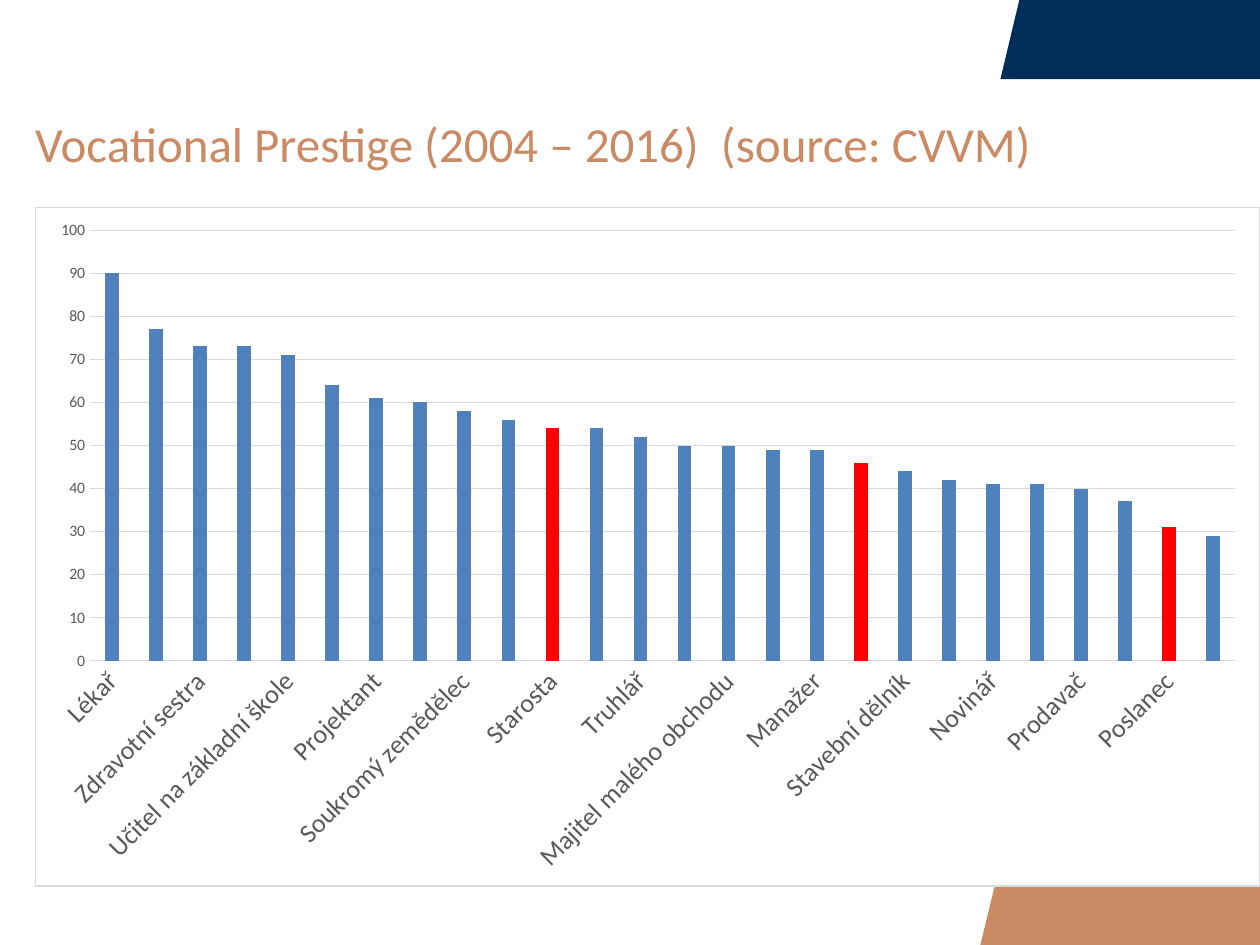
"""Build a slide with a column chart of vocational prestige."""
from dataclasses import dataclass

from lxml.etree import fromstring
from pptx import Presentation
from pptx.chart.data import CategoryChartData
from pptx.dml.color import RGBColor
from pptx.enum.chart import XL_CHART_TYPE, XL_TICK_MARK
from pptx.enum.text import MSO_ANCHOR, MSO_AUTO_SIZE, PP_ALIGN
from pptx.oxml.ns import qn
from pptx.slide import Slide
from pptx.util import Pt

NAVY = RGBColor(0x00, 0x2D, 0x5A)
COPPER = RGBColor(0xCA, 0x8A, 0x64)
BLUE = RGBColor(0x4F, 0x81, 0xBD)
RED = RGBColor(0xFF, 0x00, 0x00)
GREY = RGBColor(0x59, 0x59, 0x59)
PALE_GREY = RGBColor(0xD9, 0xD9, 0xD9)
FONT = "Calibri"
PAGE_WIDTH = 720
PAGE_HEIGHT = 540
SIDE_MARGIN = 20

PRESTIGE = {
    "Lékař": 90,
    "Vědec": 77,
    "Zdravotní sestra": 73,
    "Učitel na vysoké škole": 73,
    "Učitel na základní škole": 71,
    "Soudce": 64,
    "Projektant": 61,
    "Programátor": 60,
    "Soukromý zemědělec": 58,
    "Policista": 56,
    "Starosta": 54,
    "Voják z povolání": 54,
    "Truhlář": 52,
    "Účetní": 50,
    "Majitel malého obchodu": 50,
    "Profesionální sportovec": 49,
    "Manažer": 49,
    "Ministr": 46,
    "Stavební dělník": 44,
    "Bankovní úředník": 42,
    "Novinář": 41,
    "Kněz": 41,
    "Prodavač": 40,
    "Sekretářka": 37,
    "Poslanec": 31,
    "Uklízečka": 29,
}
POLITICIANS = ("Starosta", "Ministr", "Poslanec")

CHART_FRAME = f"""
<c:spPr xmlns:c="http://schemas.openxmlformats.org/drawingml/2006/chart"
        xmlns:a="http://schemas.openxmlformats.org/drawingml/2006/main">
  <a:solidFill><a:srgbClr val="FFFFFF"/></a:solidFill>
  <a:ln w="{Pt(0.75)}"><a:solidFill><a:srgbClr val="{PALE_GREY}"/></a:solidFill></a:ln>
</c:spPr>"""


@dataclass(frozen=True)
class CornerBand:
    left: float
    top: float
    bottom: float
    color: RGBColor
    slant: float = 10.8


BANDS = (
    CornerBand(571.7, 0, 45.2, NAVY),
    CornerBand(560.2, 496.8, PAGE_HEIGHT, COPPER, 10.5),
)


def draw_band(page: Slide, band: CornerBand) -> None:
    """Draw a slanted band that runs to the right edge."""
    builder = page.shapes.build_freeform(Pt(band.left), Pt(band.bottom))
    corners = (
        (band.left + band.slant, band.top),
        (PAGE_WIDTH, band.top),
        (PAGE_WIDTH, band.bottom),
    )
    builder.add_line_segments([(Pt(x), Pt(y)) for x, y in corners])
    shape = builder.convert_to_shape()
    shape.shadow.inherit = False
    shape.fill.solid()
    shape.fill.fore_color.rgb = band.color
    shape.line.fill.background()


def write_title(page: Slide) -> None:
    """Place the title placeholder and fill it."""
    title = page.shapes.title
    title.left, title.top, title.width, title.height = Pt(0), Pt(45.4), Pt(PAGE_WIDTH), Pt(72.7)
    frame = title.text_frame
    frame.auto_size = MSO_AUTO_SIZE.NONE
    frame.word_wrap = True
    frame.vertical_anchor = MSO_ANCHOR.MIDDLE
    frame.margin_left = frame.margin_right = Pt(SIDE_MARGIN)
    para = frame.paragraphs[0]
    para.alignment = PP_ALIGN.LEFT
    span = para.add_run()
    span.text = "Vocational Prestige (2004 – 2016)  (source: CVVM)"
    span.font.name = FONT
    span.font.size = Pt(28)
    span.font.color.rgb = COPPER


def style_axis(axis, size: float) -> None:
    """Remove tick marks and set the label font of an axis."""
    axis.major_tick_mark = axis.minor_tick_mark = XL_TICK_MARK.NONE
    font = axis.tick_labels.font
    font.name = FONT
    font.size = Pt(size)
    font.color.rgb = GREY


def draw_chart(page: Slide) -> None:
    """Draw the prestige chart with the political offices in red."""
    data = CategoryChartData()
    data.categories = PRESTIGE
    data.add_series("Series 1", PRESTIGE.values())
    chart = page.shapes.add_chart(
        XL_CHART_TYPE.COLUMN_CLUSTERED,
        Pt(SIDE_MARGIN), Pt(118.2), Pt(PAGE_WIDTH - SIDE_MARGIN), Pt(388.5), data,
    ).chart
    chart.has_title = chart.has_legend = False
    chart.font.name = FONT
    chart.font.size = Pt(10)
    chart._chartSpace.find(qn("c:chart")).addnext(fromstring(CHART_FRAME))

    style_axis(chart.category_axis, 15)
    chart.category_axis.format.line.color.rgb = PALE_GREY
    chart.category_axis.format.line.width = Pt(0.75)
    label_body = chart.category_axis._element.find(qn("c:txPr")).find(qn("a:bodyPr"))
    label_body.set("rot", str(-45 * 60000))

    style_axis(chart.value_axis, 9)
    chart.value_axis.minimum_scale = 0
    chart.value_axis.maximum_scale = 100
    chart.value_axis.major_unit = 10
    chart.value_axis.format.line.fill.background()
    gridline = chart.value_axis.major_gridlines.format.line
    gridline.color.rgb = PALE_GREY
    gridline.width = Pt(0.75)

    plot = chart.plots[0]
    plot.gap_width = 219
    plot.overlap = -27
    plot.vary_by_categories = False
    series = plot.series[0]
    series.format.fill.solid()
    series.format.fill.fore_color.rgb = BLUE
    for index, vocation in enumerate(PRESTIGE):
        if vocation in POLITICIANS:
            fill = series.points[index].format.fill
            fill.solid()
            fill.fore_color.rgb = RED


def main() -> None:
    """Build the deck and save it."""
    deck = Presentation()
    deck.slide_width, deck.slide_height = Pt(PAGE_WIDTH), Pt(PAGE_HEIGHT)
    page = deck.slides.add_slide(deck.slide_layouts[5])
    for band in BANDS:
        draw_band(page, band)
    write_title(page)
    draw_chart(page)
    deck.save("out.pptx")


if __name__ == "__main__":
    main()
